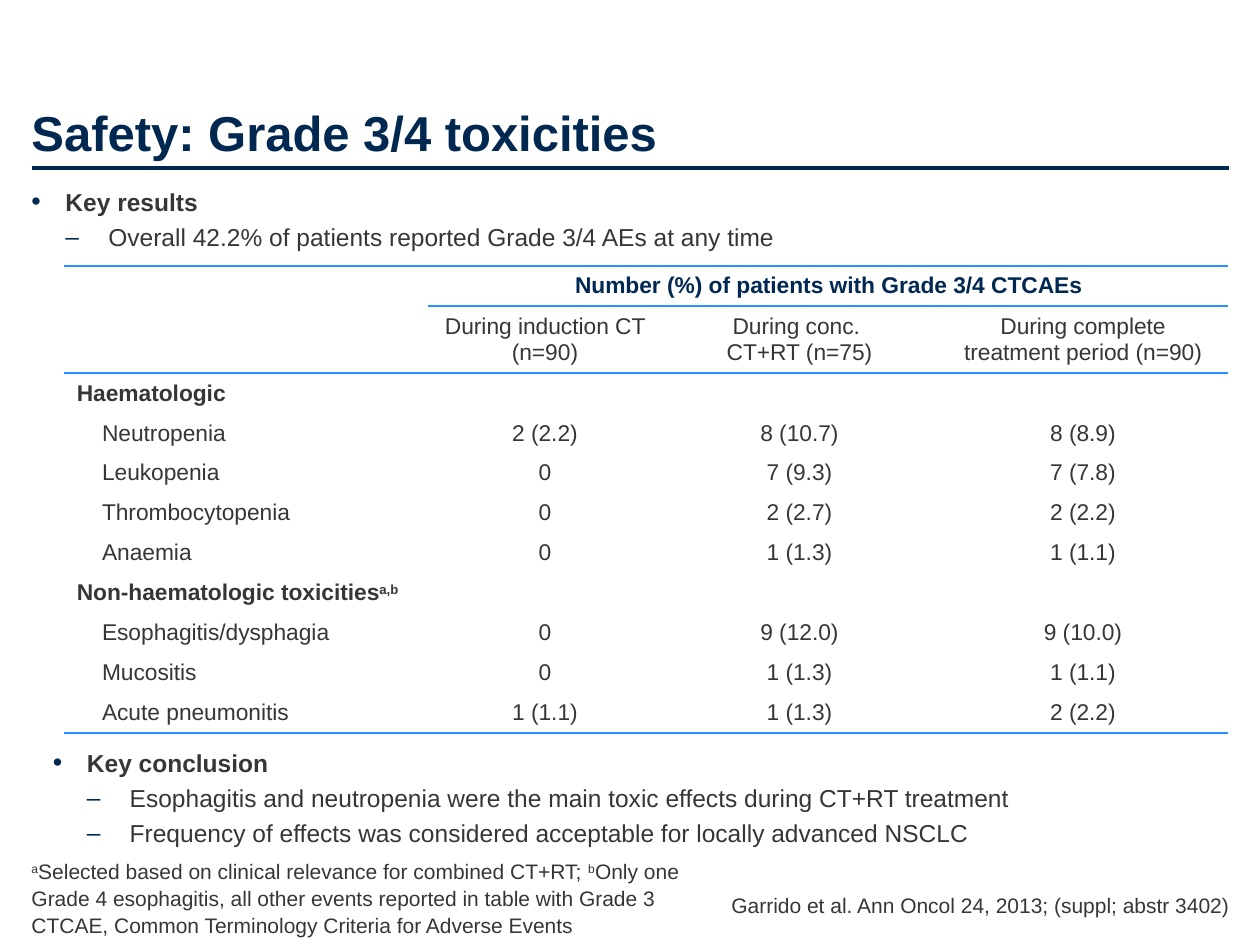
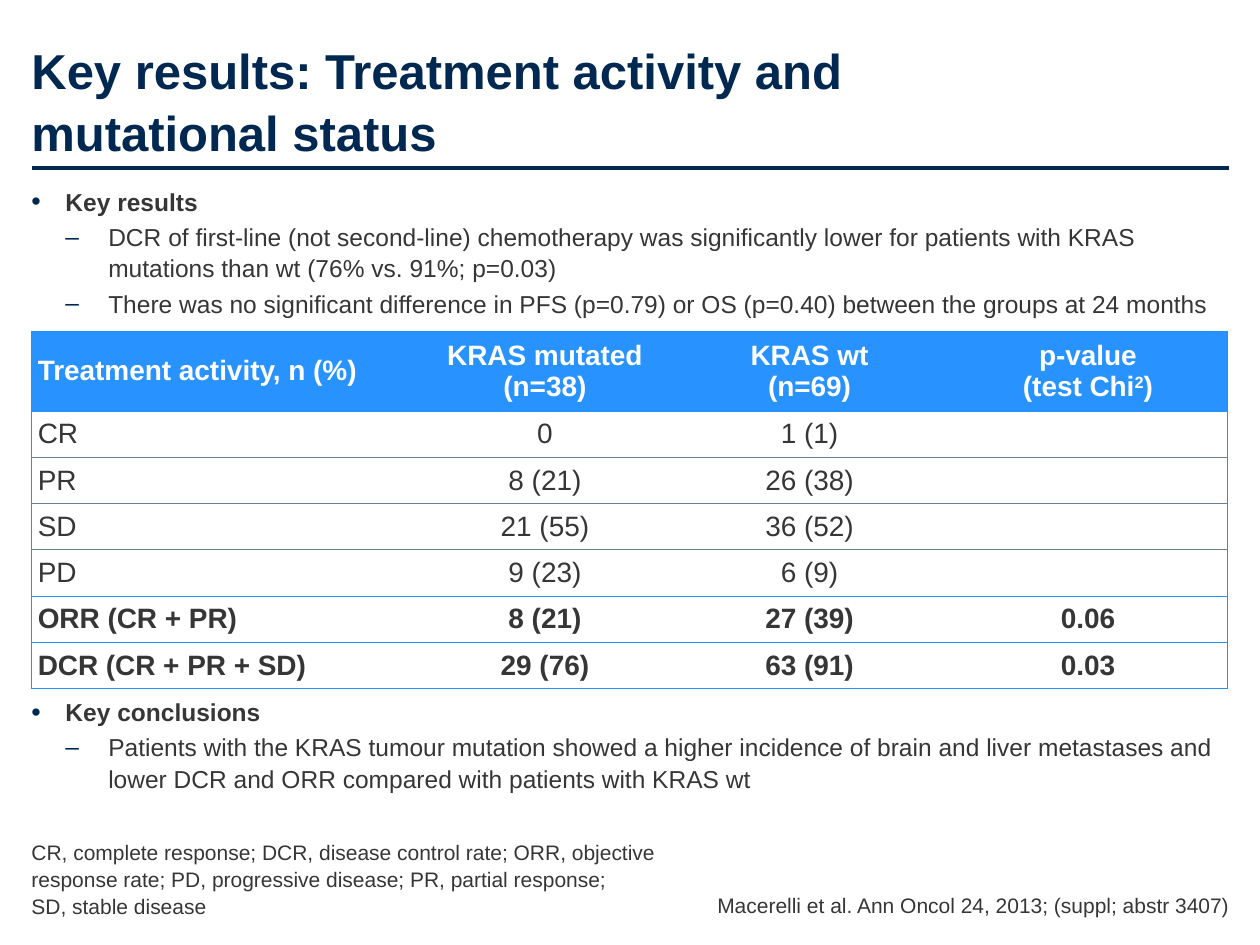
"""Build two clinical result slides, each with a table between key results and conclusions."""
import dataclasses

import lxml.etree
import pptx
import pptx.dml.color
import pptx.enum.shapes
import pptx.enum.text
import pptx.oxml.ns
import pptx.util

Inches = pptx.util.Inches
Pt = pptx.util.Pt
Align = pptx.enum.text.PP_ALIGN
Anchor = pptx.enum.text.MSO_ANCHOR
qn = pptx.oxml.ns.qn


@dataclasses.dataclass(frozen=True)
class Theme:
    font: str = "Arial"
    navy: str = "002850"
    text: str = "363636"
    white: str = "FFFFFF"
    blue: str = "2893FF"
    edge: str = "2291FF"
    grey: str = "6B7F93"
    title_size: int = 28
    body_size: int = 14
    note_size: int = 12
    left: float = 0.25
    width: float = 9.5
    leading: float = 1.06
    gap: float = 2.4


THEME = Theme()

SLIDES = [
    {
        "title": "Safety: Grade 3/4 toxicities",
        "bullets": [
            (0.25, 1.42, 1.0, [
                "Key results",
                "Overall 42.2% of patients reported Grade 3/4 AEs at any time",
            ]),
            (0.42, 5.87, 0.83, [
                "Key conclusion",
                "Esophagitis and neutropenia were the main toxic effects during CT+RT treatment",
                "Frequency of effects was considered acceptable for locally advanced NSCLC",
            ]),
        ],
        "table": {
            "place": (0.51, 2.11),
            "columns": [2.89, 1.85, 2.19, 2.31],
            "height": 3.7,
            "tall_row": (1, 0.53),
            "size": 13,
            "inset": 0.1,
            "header_color": THEME.navy,
            "header_fill": None,
            "merge": ((0, 1), (0, 3)),
            "bold": {0, 2, 7},
            "indented": {3, 4, 5, 6, 8, 9, 10},
            "rules": {0: (THEME.blue, 0), 1: (THEME.blue, 1), 2: (THEME.blue, 0), 11: (THEME.blue, 0)},
            "rule_width": 1.5,
            "side": None,
            "rows": [
                ["", "Number (%) of patients with Grade 3/4 CTCAEs"],
                ["", "During induction CT (n=90)", "During conc. \nCT+RT (n=75)",
                 "During complete treatment period (n=90)"],
                ["Haematologic"],
                ["Neutropenia", "2 (2.2)", "8 (10.7)", "8 (8.9)"],
                ["Leukopenia", "0", "7 (9.3)", "7 (7.8)"],
                ["Thrombocytopenia", "0", "2 (2.7)", "2 (2.2)"],
                ["Anaemia", "0", "1 (1.3)", "1 (1.1)"],
                ["Non-haematologic toxicities^a,b^"],
                ["Esophagitis/dysphagia", "0", "9 (12.0)", "9 (10.0)"],
                ["Mucositis", "0", "1 (1.3)", "1 (1.1)"],
                ["Acute pneumonitis", "1 (1.1)", "1 (1.3)", "2 (2.2)"],
            ],
        },
        "footnote": (6.83, 5.26, [
            "^a^Selected based on clinical relevance for combined CT+RT; ^b^Only one \n"
            "Grade 4 esophagitis, all other events reported in table with Grade 3",
            "CTCAE, Common Terminology Criteria for Adverse Events",
        ]),
        "citation": "Garrido et al. Ann Oncol 24, 2013; (suppl; abstr 3402)",
    },
    {
        "title": "Key results: Treatment activity and \nmutational status",
        "bullets": [
            (0.25, 1.42, 1.2, [
                "Key results",
                "DCR of first-line (not second-line) chemotherapy was significantly lower for patients "
                "with KRAS mutations than wt (76% vs. 91%; p=0.03)",
                "There was no significant difference in PFS (p=0.79) or OS (p=0.40) between the groups "
                "at 24 months",
            ]),
            (0.25, 5.47, 0.9, [
                "Key conclusions",
                "Patients with the KRAS tumour mutation showed a higher incidence of brain and liver "
                "metastases and lower DCR and ORR compared with patients with KRAS wt",
            ]),
        ],
        "table": {
            "place": (0.25, 2.63),
            "columns": [3.08, 1.99, 2.21, 2.21],
            "height": 2.83,
            "tall_row": (0, 0.63),
            "size": 16,
            "inset": 0.05,
            "header_color": THEME.white,
            "header_fill": THEME.blue,
            "merge": None,
            "bold": {0, 5, 6},
            "indented": set(),
            "rules": {line: (THEME.grey if 2 <= line <= 4 else THEME.edge, 0) for line in range(8)},
            "rule_width": 0.75,
            "side": THEME.edge,
            "rows": [
                ["Treatment activity, n (%)", "KRAS mutated\n(n=38)", "KRAS wt\n(n=69)",
                 "p-value\n(test Chi^2^)"],
                ["CR", "0", "1 (1)"],
                ["PR", "8 (21)", "26 (38)"],
                ["SD", "21 (55)", "36 (52)"],
                ["PD", "9 (23)", "6 (9)"],
                ["ORR (CR + PR)", "8 (21)", "27 (39)", "0.06"],
                ["DCR (CR + PR + SD)", "29 (76)", "63 (91)", "0.03"],
            ],
        },
        "footnote": (6.68, 5.06, [
            "CR, complete response; DCR, disease control rate; ORR, objective response rate; "
            "PD, progressive disease; PR, partial response; \nSD, stable disease",
        ]),
        "citation": "Macerelli et al. Ann Oncol 24, 2013; (suppl; abstr 3407)",
    },
]


def rgb(color):
    return pptx.dml.color.RGBColor.from_string(color)


def write(para, text, *, size, color=THEME.text, bold=False, align=Align.LEFT, leading=None, before=0):
    """Fill a paragraph; text between carets is raised and a newline breaks the line."""
    para.alignment = align
    para.space_before = Pt(before)
    if leading:
        para.line_spacing = leading
    if not text:
        lxml.etree.SubElement(para._p, qn("a:endParaRPr"), sz=str(size * 100))
    for part, piece in enumerate(text.split("^")):
        for number, line in enumerate(piece.split("\n")):
            if number:
                para.add_line_break()
                lxml.etree.SubElement(para._p[-1], qn("a:rPr"), sz=str(size * 100))
            if not line:
                continue
            span = para.add_run()
            span.text = line
            span.font.name = THEME.font
            span.font.size = Pt(size)
            span.font.bold = bold
            span.font.color.rgb = rgb(color)
            if part % 2:
                span._r.get_or_add_rPr().set("baseline", "30000")


def add_box(page, left, top, width, height, texts, *, anchor=Anchor.TOP, insets=(0, 0), **style):
    box = page.shapes.add_textbox(Inches(left), Inches(top), Inches(width), Inches(height))
    frame = box.text_frame
    frame.word_wrap = True
    frame.vertical_anchor = anchor
    frame.margin_left = frame.margin_right = 0
    frame.margin_top, frame.margin_bottom = map(Inches, insets)
    for number, text in enumerate(texts):
        para = frame.add_paragraph() if number else frame.paragraphs[0]
        write(para, text, leading=THEME.leading, **({"bold": number == 0} | style))
    return box


def indent(para, left, hanging=0):
    properties = para._p.get_or_add_pPr()
    properties.set("marL", str(Inches(left)))
    properties.set("indent", str(-Inches(hanging)))
    return properties


def add_bullets(page, left, top, height, texts):
    box = add_box(page, left, top, THEME.width, height, texts, insets=(0.05, 0.05),
                  size=THEME.body_size, before=THEME.gap)
    for number, para in enumerate(box.text_frame.paragraphs):
        margin, hanging, mark, scale = (0.61, 0.34, "–", 100) if number else (0.27, 0.27, "•", 110)
        properties = indent(para, margin, hanging)
        color = lxml.etree.SubElement(properties, qn("a:buClr"))
        lxml.etree.SubElement(color, qn("a:srgbClr"), val=THEME.navy)
        lxml.etree.SubElement(properties, qn("a:buSzPct"), val=str(scale * 1000))
        lxml.etree.SubElement(properties, qn("a:buFont"), typeface=THEME.font)
        lxml.etree.SubElement(properties, qn("a:buChar"), char=mark)


def set_borders(cell, width, **colors):
    properties = cell._tc.get_or_add_tcPr()
    for position, side in enumerate("LRTB"):
        line = lxml.etree.Element(qn(f"a:ln{side}"), w=str(Pt(width)))
        if colors[side]:
            fill = lxml.etree.SubElement(line, qn("a:solidFill"))
            lxml.etree.SubElement(fill, qn("a:srgbClr"), val=colors[side])
        else:
            lxml.etree.SubElement(line, qn("a:noFill"))
        properties.insert(position, line)


def add_results_table(page, data):
    rows, columns = data["rows"], data["columns"]
    left, top = data["place"]
    frame = page.shapes.add_table(len(rows), len(columns), Inches(left), Inches(top),
                                  Inches(sum(columns)), Inches(data["height"]))
    table = frame.table
    table.first_row = table.horz_banding = False
    for column, width in zip(table.columns, columns):
        column.width = Inches(width)
    tall, tall_height = data["tall_row"]
    row_height = (data["height"] - tall_height) / (len(rows) - 1)

    def rule(line, column):
        color, first = data["rules"].get(line, (None, 0))
        return color if column >= first else None

    for r, row in enumerate(rows):
        table.rows[r].height = Inches(tall_height if r == tall else row_height)
        for c in range(len(columns)):
            cell = table.cell(r, c)
            cell.vertical_anchor = Anchor.MIDDLE
            cell.margin_left = cell.margin_right = Inches(data["inset"])
            cell.margin_top = cell.margin_bottom = Inches(0.05)
            if r == 0 and data["header_fill"]:
                cell.fill.solid()
                cell.fill.fore_color.rgb = rgb(data["header_fill"])
            else:
                cell.fill.background()
            para = cell.text_frame.paragraphs[0]
            write(para, row[c] if c < len(row) else "", size=data["size"], bold=r in data["bold"],
                  color=THEME.text if r else data["header_color"],
                  align=Align.CENTER if c else Align.LEFT)
            if c == 0 and r in data["indented"]:
                indent(para, 0.2)
            set_borders(cell, data["rule_width"], T=rule(r, c), B=rule(r + 1, c),
                        L=None if c else data["side"],
                        R=data["side"] if c == len(columns) - 1 else None)
    if data["merge"]:
        start, end = data["merge"]
        table.cell(*start).merge(table.cell(*end))


def add_title(page, text):
    rule = page.shapes.add_connector(pptx.enum.shapes.MSO_CONNECTOR.STRAIGHT, Inches(THEME.left),
                                     Inches(1.33), Inches(THEME.left + THEME.width), Inches(1.33))
    rule.line.color.rgb = rgb(THEME.navy)
    rule.line.width = Pt(2.25)
    lxml.etree.SubElement(rule._element.spPr, qn("a:effectLst"))
    add_box(page, THEME.left, 0.25, THEME.width, 1.03, [text], anchor=Anchor.BOTTOM,
            insets=(0.05, 0), size=THEME.title_size, color=THEME.navy)


def add_footer(page, footnote, citation):
    top, width, texts = footnote
    style = {"anchor": Anchor.BOTTOM, "size": THEME.note_size, "bold": False}
    add_box(page, THEME.left, top, width, 0.61, texts, **style)
    add_box(page, 5.65, 7.08, 4.11, 0.2, [citation], align=Align.RIGHT, **style)


def main():
    deck = pptx.Presentation()
    deck.slide_width, deck.slide_height = Inches(10), Inches(7.5)
    for content in SLIDES:
        page = deck.slides.add_slide(deck.slide_layouts[6])
        add_title(page, content["title"])
        for block in content["bullets"]:
            add_bullets(page, *block)
        add_results_table(page, content["table"])
        add_footer(page, content["footnote"], content["citation"])
    deck.save("out.pptx")


if __name__ == "__main__":
    main()
